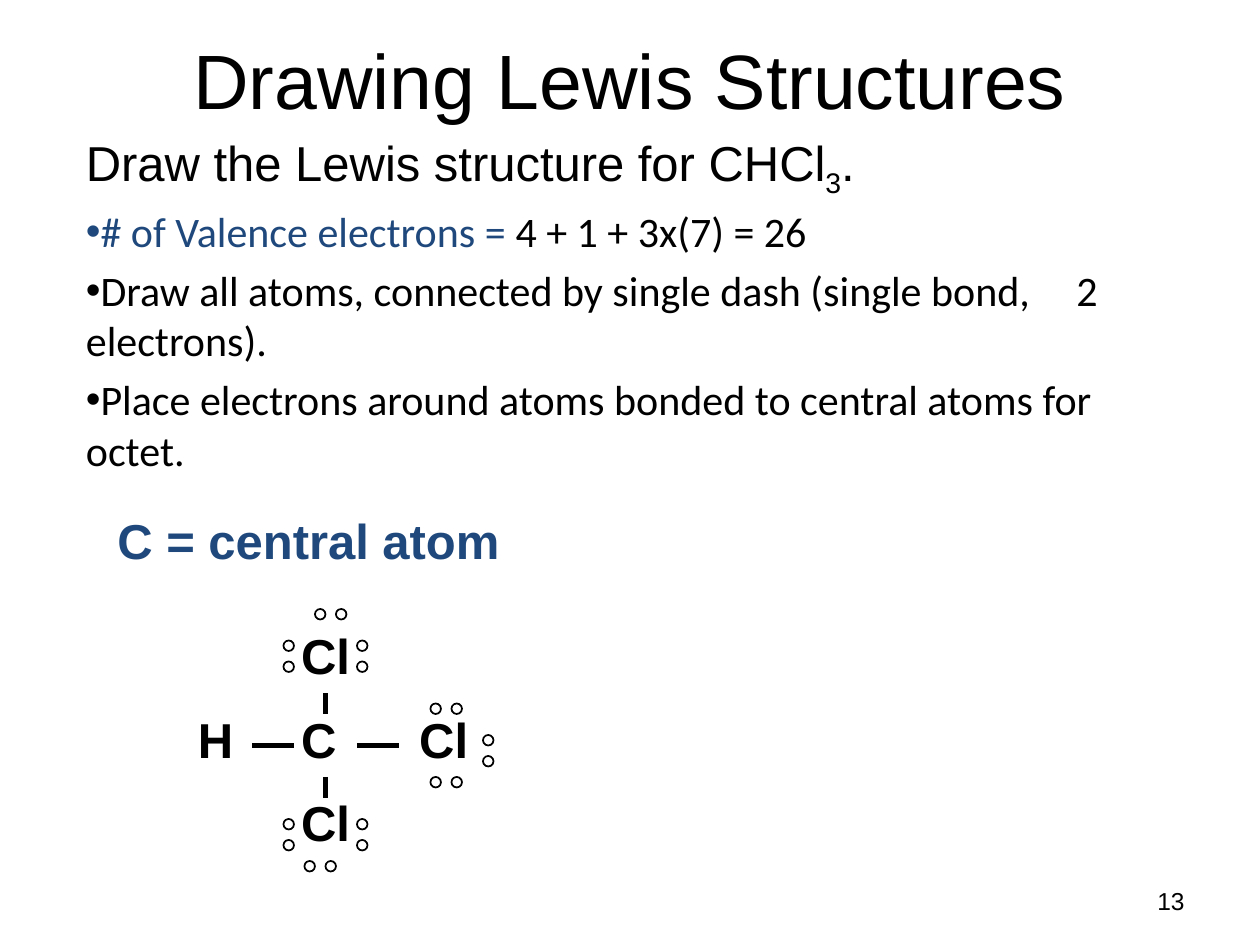
from typing import NamedTuple

from lxml import etree
from pptx import Presentation
from pptx.dml.color import RGBColor
from pptx.enum.shapes import MSO_CONNECTOR, MSO_SHAPE
from pptx.enum.text import MSO_ANCHOR, PP_ALIGN
from pptx.oxml.ns import qn
from pptx.util import Pt

LINE = MSO_CONNECTOR.STRAIGHT
OVAL = MSO_SHAPE.OVAL
TOP, MIDDLE = MSO_ANCHOR.TOP, MSO_ANCHOR.MIDDLE
LEFT, CENTER, RIGHT = PP_ALIGN.LEFT, PP_ALIGN.CENTER, PP_ALIGN.RIGHT

COLORS = {"black": "000000", "white": "FFFFFF", "blue": "1F497D"}
DOT = 6
STEP = 12


class Part(NamedTuple):
    text: str
    color: str = "black"
    base: int = 0


class Box(NamedTuple):
    left: float
    top: float
    width: float
    height: float
    paras: list[list[Part]]
    size: float
    font: str = "Arial"
    bold: bool = False
    align: PP_ALIGN = LEFT
    anchor: MSO_ANCHOR = TOP
    before: int = 0
    bullet: str = ""
    tabs: tuple[float, ...] = ()


class Bond(NamedTuple):
    left: float
    top: float
    across: float
    down: float


class Pair(NamedTuple):
    left: float
    top: float
    across: int
    down: int


BOXES = [
    Box(516, 500.4, 168, 28.8, [[Part("13")]], 14, align=RIGHT, anchor=MIDDLE),
    Box(36, 0, 648, 90, [[Part("Drawing Lewis Structures")]], 44,
        align=CENTER, anchor=MIDDLE),
    Box(42, 72, 648, 48,
        [[Part("Draw the Lewis structure for CHCl"), Part("3", base=-25000), Part(".")]],
        28, before=20),
    Box(42, 114, 612, 48, [
        [Part("# of Valence electrons =", "blue"), Part(" 4 + 1 + 3x(7) = 26")],
        [Part("Draw all atoms, connected by single dash (single bond,\t2 electrons).")],
        [Part("Place electrons around atoms bonded to central atoms for octet.")],
    ], 24, "Calibri", before=20, bullet="•", tabs=(566,)),
    Box(60, 288, 252, 41, [[Part("C = central atom", "blue")]], 28,
        bold=True, before=50),
    Box(72, 354, 366, 142,
        [[Part("\t\tCl")], [Part("\tH\tC\tCl")], [Part("\t\tCl")]], 28,
        bold=True, before=50, tabs=(34, 93, 160.5)),
]

BONDS = [
    Bond(144, 426, 24, 0),
    Bond(204, 426, 24, 0),
    Bond(186, 396, 0, 12),
    Bond(186, 444, 0, 12),
]

FLAT = [(246, 444), (246, 402), (174, 492), (180, 348)]
TALL = [(204, 468), (162, 468), (204, 366), (162, 366), (276, 420)]
PAIRS = [Pair(x, y, STEP, 0) for x, y in FLAT] + [Pair(x, y, 0, STEP) for x, y in TALL]


def paint(name: str) -> RGBColor:
    """Return the named colour."""
    return RGBColor.from_string(COLORS[name])


def add_tag(root, tag: str, **attrs: str):
    """Append a drawing element with its attributes."""
    return etree.SubElement(root, qn(tag), attrs)


def set_rules(para, box: Box) -> None:
    """Set the spacing, bullet and tab stops of a paragraph."""
    props = para._p.get_or_add_pPr()
    if box.before:
        space = add_tag(props, "a:spcBef")
        add_tag(space, "a:spcPct", val=str(box.before * 1000))
    if box.bullet:
        add_tag(props, "a:buFont", typeface="Arial")
        add_tag(props, "a:buChar", char=box.bullet)
    if box.tabs:
        stops = add_tag(props, "a:tabLst")
        for stop in box.tabs:
            add_tag(stops, "a:tab", pos=str(int(Pt(stop))), algn="l")


def add_box(slide, box: Box) -> None:
    """Add a text box with its paragraphs."""
    shape = slide.shapes.add_textbox(
        Pt(box.left), Pt(box.top), Pt(box.width), Pt(box.height))
    frame = shape.text_frame
    frame.word_wrap = True
    frame.vertical_anchor = box.anchor
    for i, parts in enumerate(box.paras):
        para = frame.add_paragraph() if i else frame.paragraphs[0]
        para.alignment = box.align
        set_rules(para, box)
        para.text = parts[0].text
        for part in parts[1:]:
            para.add_run().text = part.text
        for run, part in zip(para.runs, parts):
            run.font.name = box.font
            run.font.size = Pt(box.size)
            run.font.bold = box.bold
            run.font.color.rgb = paint(part.color)
            if part.base:
                run.font._element.set("baseline", str(part.base))


def add_bond(group, bond: Bond) -> None:
    """Add the dash of a single bond."""
    line = group.shapes.add_connector(
        LINE, Pt(bond.left), Pt(bond.top),
        Pt(bond.left + bond.across), Pt(bond.top + bond.down))
    line.line.color.rgb = paint("black")
    line.line.width = Pt(3)
    add_tag(line._element.spPr, "a:effectLst")


def add_pair(slide, pair: Pair) -> None:
    """Add a lone pair as a group of two dots."""
    group = slide.shapes.add_group_shape()
    for i in range(2):
        dot = group.shapes.add_shape(
            OVAL, Pt(pair.left + i * pair.across), Pt(pair.top + i * pair.down),
            Pt(DOT), Pt(DOT))
        dot.shadow.inherit = False
        dot.fill.solid()
        dot.fill.fore_color.rgb = paint("white")
        dot.line.color.rgb = paint("black")
        dot.line.width = Pt(1)


def main() -> None:
    """Build the slide and save it."""
    deck = Presentation()
    deck.slide_width, deck.slide_height = Pt(720), Pt(540)
    slide = deck.slides.add_slide(deck.slide_layouts[6])
    for box in BOXES:
        add_box(slide, box)
    bonds = slide.shapes.add_group_shape()
    for bond in BONDS:
        add_bond(bonds, bond)
    for pair in PAIRS:
        add_pair(slide, pair)
    deck.save("out.pptx")


if __name__ == "__main__":
    main()
